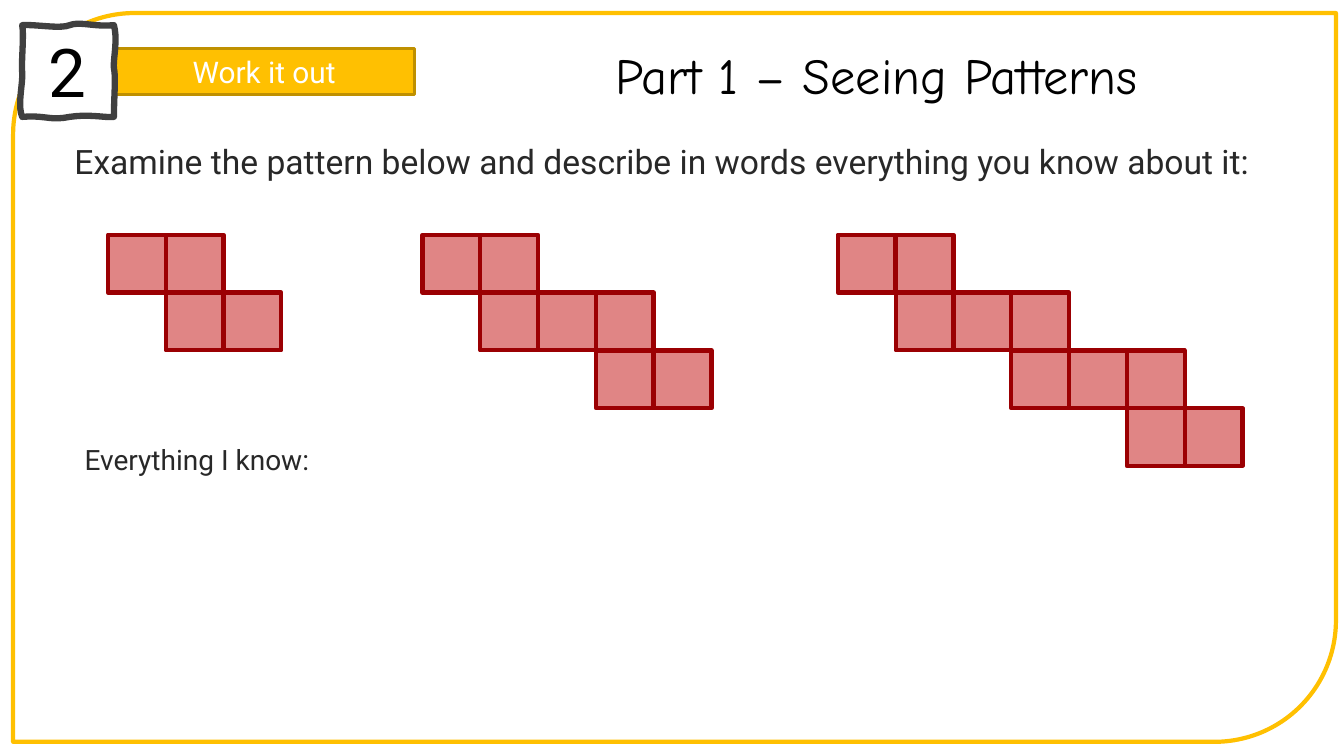
from dataclasses import dataclass

from lxml.etree import SubElement
from pptx import Presentation
from pptx.dml.color import RGBColor as RGB
from pptx.enum.shapes import MSO_SHAPE as SHAPE
from pptx.enum.text import MSO_ANCHOR as ANCHOR, PP_ALIGN as ALIGN
from pptx.oxml.ns import qn
from pptx.util import Inches, Pt

BANNER = "Work it out"
NUMBER = "2"
TITLE = "Part 1 – Seeing Patterns"
TASK = "Examine the pattern below and describe in words everything you know about it:"
ANSWER = "Everything I know:"

FIGURES = [(1, 1.07), (2, 4.19), (3, 8.31)]
FIGURE_TOP = 2.33
CELL = 3.44 / 6

BADGE_START = (0.22, 0.25)
BADGE_CURVES = [
    ((0.36, 0.24), (0.59, 0.29), (0.69, 0.25)),
    ((0.8, 0.21), (0.93, 0.27), (1.13, 0.25)),
    ((1.17, 0.4), (1.12, 0.59), (1.13, 0.68)),
    ((1.15, 0.77), (1.13, 0.95), (1.13, 1.16)),
    ((1.03, 1.17), (0.9, 1.13), (0.69, 1.16)),
    ((0.49, 1.2), (0.45, 1.14), (0.22, 1.16)),
    ((0.17, 1.04), (0.23, 0.82), (0.22, 0.72)),
    ((0.21, 0.62), (0.24, 0.35), (0.22, 0.25)),
]
CURVE_STEPS = 10


@dataclass(frozen=True)
class Theme:
    body_font: str = "Roboto"
    title_font: str = "Comic Neue"
    gold: str = "FFC001"
    dark_gold: str = "BF9000"
    red: str = "C00000"
    dark_red: str = "9B0003"
    red_opacity: int = 48
    white: str = "FFFFFF"
    black: str = "000000"
    ink: str = "282828"
    grey: str = "404040"
    number_size: float = 48
    title_size: float = 36
    task_size: float = 24
    banner_size: float = 21.3
    answer_size: float = 20


T = Theme()


def style(sp, fill, line, width, opacity=None):
    sp.shadow.inherit = False
    if fill:
        sp.fill.solid()
        sp.fill.fore_color.rgb = RGB.from_string(fill)
    else:
        sp.fill.background()
    if opacity:
        color = sp.element.spPr.find(qn("a:solidFill")).find(qn("a:srgbClr"))
        SubElement(color, qn("a:alpha")).set("val", str(opacity * 1000))
    sp.line.color.rgb = RGB.from_string(line)
    sp.line.width = Pt(width)
    return sp


def add_box(s, shape, box, *look):
    return style(s.shapes.add_shape(shape, *map(Inches, box)), *look)


def write(sp, text, size, color, font=T.body_font, align=ALIGN.CENTER, anchor=ANCHOR.MIDDLE):
    tf = sp.text_frame
    tf.word_wrap = True
    tf.vertical_anchor = anchor
    p = tf.paragraphs[0]
    p.text = text
    p.alignment = align
    p.font.size = Pt(size)
    p.font.name = font
    p.font.color.rgb = RGB.from_string(color)


def add_text(s, box, *args, **kwargs):
    write(s.shapes.add_textbox(*map(Inches, box)), *args, **kwargs)


def curve_points(start, curves):
    for c1, c2, end in curves:
        for i in range(1, CURVE_STEPS + 1):
            t = i / CURVE_STEPS
            u = 1 - t
            yield tuple(
                Inches(u**3 * a + 3 * u * u * t * b + 3 * u * t * t * c + t**3 * d)
                for a, b, c, d in zip(start, c1, c2, end)
            )
        start = end


def add_badge(s):
    builder = s.shapes.build_freeform(*map(Inches, BADGE_START))
    builder.add_line_segments(list(curve_points(BADGE_START, BADGE_CURVES)), close=True)
    sp = style(builder.convert_to_shape(), T.white, T.grey, 4.5)
    write(sp, NUMBER, T.number_size, T.black)


def add_figure(s, n, left):
    for row in range(n + 1):
        first, last = max(0, 2 * row - 1), min(2 * row + 1, 2 * n)
        for col in range(first, last + 1):
            box = (left + col * CELL, FIGURE_TOP + row * CELL, CELL, CELL)
            add_box(s, SHAPE.RECTANGLE, box, T.red, T.dark_red, 3, T.red_opacity)


def main():
    prs = Presentation()
    prs.slide_width, prs.slide_height = Inches(13.33), Inches(7.5)
    s = prs.slides.add_slide(prs.slide_layouts[6])

    add_box(s, SHAPE.ROUND_2_DIAG_RECTANGLE, (0.13, 0.13, 13.12, 7.23), None, T.gold, 3)
    banner = add_box(s, SHAPE.RECTANGLE, (1.13, 0.48, 2.98, 0.46), T.gold, T.dark_gold, 2.25)
    write(banner, BANNER, T.banner_size, T.white)
    add_badge(s)

    for n, left in FIGURES:
        add_figure(s, n, left)

    left_top = {"align": ALIGN.LEFT, "anchor": ANCHOR.TOP}
    add_text(s, (0.64, 1.35, 12.19, 0.91), TASK, T.task_size, T.ink, **left_top)
    add_text(s, (0.74, 4.34, 3.38, 0.44), ANSWER, T.answer_size, T.ink, **left_top)
    add_text(s, (5.07, 0.38, 7.25, 0.71), TITLE, T.title_size, T.black, T.title_font)

    prs.save("out.pptx")


if __name__ == "__main__":
    main()
